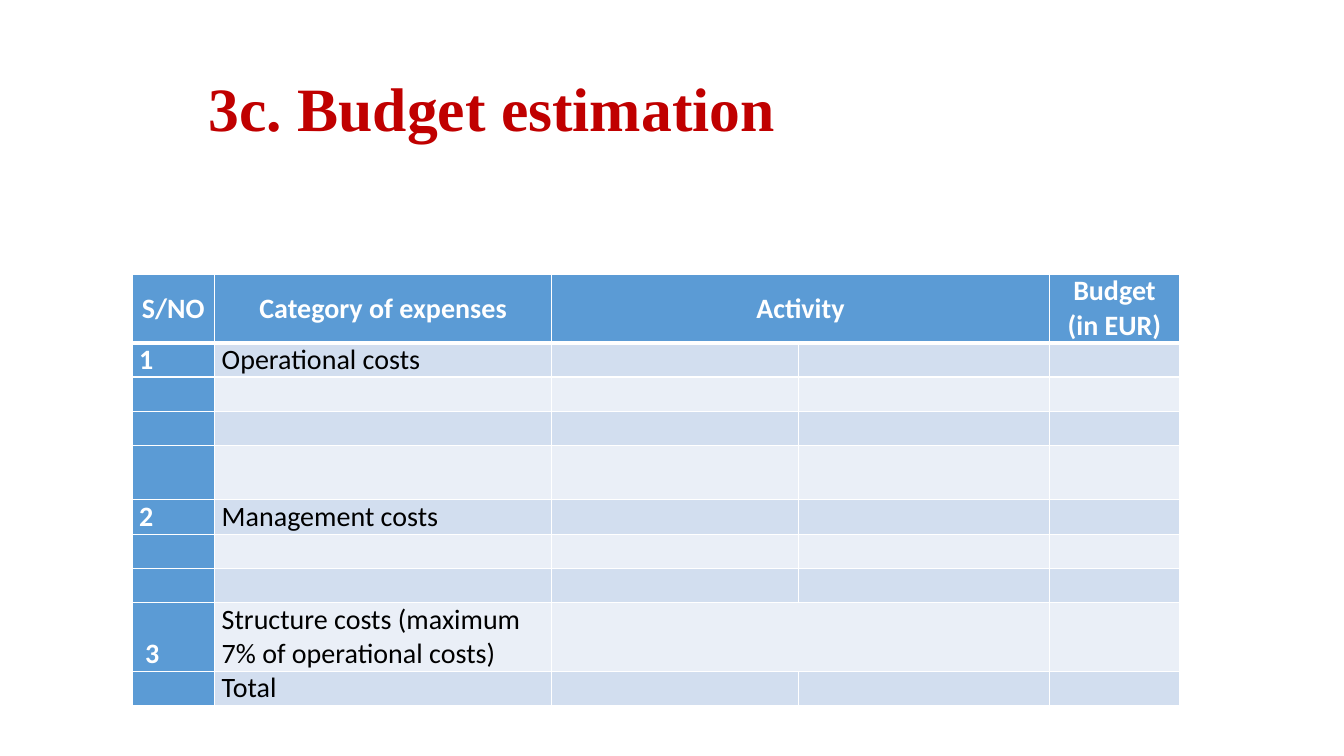
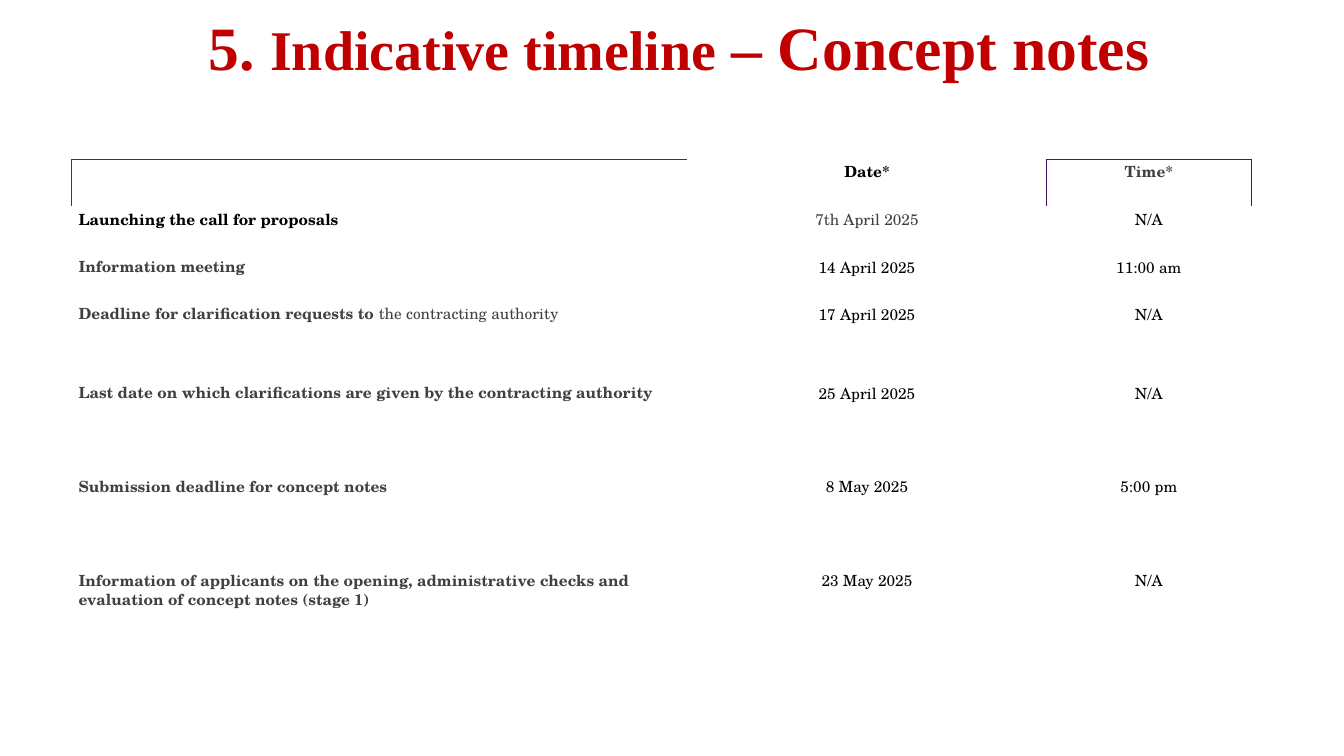
from dataclasses import dataclass

from lxml.etree import SubElement
from pptx import Presentation
from pptx.dml.color import RGBColor
from pptx.enum.text import MSO_ANCHOR, PP_ALIGN
from pptx.oxml.ns import qn
from pptx.util import Pt

PX = 9144  # EMU per px, 100 px to the inch


@dataclass(frozen=True)
class Theme:
    title_font: str = "Times New Roman"
    budget_font: str = "Calibri"
    timeline_font: str = "TeX Gyre Schola"
    title_size: int = 44
    title_small: int = 40
    budget_size: int = 20
    timeline_size: int = 11
    red: str = "C00000"
    black: str = "000000"
    grey: str = "404040"
    white: str = "FFFFFF"
    blue: str = "5B9BD5"
    band_dark: str = "D2DEEF"
    band_light: str = "EAEFF7"
    plum: str = "701860"
    violet: str = "501260"


T = Theme()


def add_run(p, text, font, size, color, bold):
    r = p.add_run()
    r.text = text
    r.font.name = font
    r.font.size = Pt(size)
    r.font.bold = bold
    r.font.color.rgb = RGBColor.from_string(color)


def set_borders(cell, width, **colors):
    """Draw all four edges, white unless L, R, T or B names a colour."""
    tc_pr = cell._tc.get_or_add_tcPr()
    for side in "LRTB":
        w = width[side] if isinstance(width, dict) else width
        ln = SubElement(tc_pr, qn(f"a:ln{side}"), w=str(Pt(w)))
        fill = SubElement(ln, qn("a:solidFill"))
        SubElement(fill, qn("a:srgbClr"), val=colors.get(side, T.white))


prs = Presentation()
prs.slide_width, prs.slide_height = 1333 * PX, 750 * PX

# Title box, title runs, table origin, column widths, row heights
pages = [
    ((197, 38, 945, 145), MSO_ANCHOR.MIDDLE,
     [("3c. Budget estimation", T.title_size)],
     (131, 272), [82, 334, 245, 249, 129],
     [68, 34, 34, 34, 54, 34, 34, 34, 68, 34]),
    ((197, 12, 1105, 117), MSO_ANCHOR.TOP,
     [("5. ", T.title_size), ("Indicative timeline", T.title_small),
      (" – Concept notes", T.title_size)],
     (71, 158), [611, 356, 203],
     [47, 47, 47, 78, 93, 93, 111]),
]
tables = []
for box, anchor, runs, (left, top), cols, rows in pages:
    s = prs.slides.add_slide(prs.slide_layouts[6])
    tf = s.shapes.add_textbox(*(v * PX for v in box)).text_frame
    tf.word_wrap = True
    tf.vertical_anchor = anchor
    p = tf.paragraphs[0]
    p.line_spacing = 0.9
    for text, size in runs:
        add_run(p, text, T.title_font, size, T.red, True)

    table = s.shapes.add_table(len(rows), len(cols), left * PX, top * PX,
                               sum(cols) * PX, sum(rows) * PX).table
    table.first_row = table.horz_banding = False
    for column, width in zip(table.columns, cols):
        column.width = width * PX
    for row, height in zip(table.rows, rows):
        row.height = height * PX
    tables.append(table)

budget, timeline = tables

# Budget estimation
budget_text = {
    (0, 0): "S/NO", (0, 1): "Category of expenses", (0, 2): "Activity",
    (0, 4): "Budget (in EUR)",
    (1, 0): "1", (1, 1): "Operational costs",
    (5, 0): "2", (5, 1): "Management costs",
    (8, 0): "3", (8, 1): "Structure costs (maximum 7% of operational costs)",
    (9, 1): "Total",
}
for i in (0, 8):
    budget.cell(i, 2).merge(budget.cell(i, 3))

for i in range(len(budget.rows)):
    for j in range(len(budget.columns)):
        cell = budget.cell(i, j)
        header = i == 0
        strong = header or j == 0
        set_borders(cell, {"L": 1, "R": 1, "T": 3 if i == 1 else 1,
                           "B": 3 if header else 1})
        cell.fill.solid()
        band = T.band_dark if i % 2 else T.band_light
        cell.fill.fore_color.rgb = RGBColor.from_string(
            T.blue if strong else band)
        cell.margin_left = (13 if (i, j) == (8, 0) else 7) * PX
        cell.margin_right = 7 * PX
        cell.margin_top = cell.margin_bottom = 0
        cell.vertical_anchor = MSO_ANCHOR.MIDDLE if header else MSO_ANCHOR.BOTTOM
        if (i, j) in budget_text:
            p = cell.text_frame.paragraphs[0]
            p.alignment = PP_ALIGN.CENTER if header else PP_ALIGN.LEFT
            add_run(p, budget_text[i, j], T.budget_font, T.budget_size,
                    T.white if strong else T.black, strong)

# Indicative timeline: each cell is a list of (text, colour, bold) runs
steps = [
    ([("Launching the call for proposals", T.black, True)],
     ("7th April 2025", T.grey), "N/A"),
    ([("Information meeting", T.grey, True)],
     ("14 April 2025", T.black), "11:00 am"),
    ([("Deadline for clarification requests to ", T.grey, True),
      ("the contracting authority", T.grey, False)],
     ("17 April 2025", T.black), "N/A"),
    ([("Last date on which clarifications are given by the contracting "
       "authority", T.grey, True)],
     ("25 April 2025", T.black), "N/A"),
    ([("Submission deadline for concept notes", T.grey, True)],
     ("8 May 2025", T.black), "5:00 pm"),
    ([("Information of applicants on the opening, administrative checks and "
       "evaluation of concept notes (stage 1)", T.grey, True)],
     ("23 May 2025", T.black), "N/A"),
]
timeline_rows = [[[], [("Date*", T.black, True)], [("Time*", T.grey, True)]]]
for step, (date, color), time in steps:
    timeline_rows.append([step, [(date, color, False)],
                          [(time, T.black, False)]])

header_edges = [
    {"L": T.plum, "T": T.plum},
    {"R": T.violet},
    {"L": T.violet, "T": T.violet, "R": T.violet},
]
for i, row in enumerate(timeline_rows):
    for j, runs in enumerate(row):
        cell = timeline.cell(i, j)
        set_borders(cell, 0.75, **(header_edges[j] if i == 0 else {}))
        cell.fill.background()
        cell.margin_left = cell.margin_right = 7 * PX
        cell.margin_top = cell.margin_bottom = 5 * PX
        p = cell.text_frame.paragraphs[0]
        p.alignment = PP_ALIGN.CENTER if j else PP_ALIGN.LEFT
        p.line_spacing = Pt(13.8)
        p.space_after = Pt(6)
        for text, color, bold in runs:
            add_run(p, text, T.timeline_font, T.timeline_size, color, bold)

prs.save("out.pptx")
